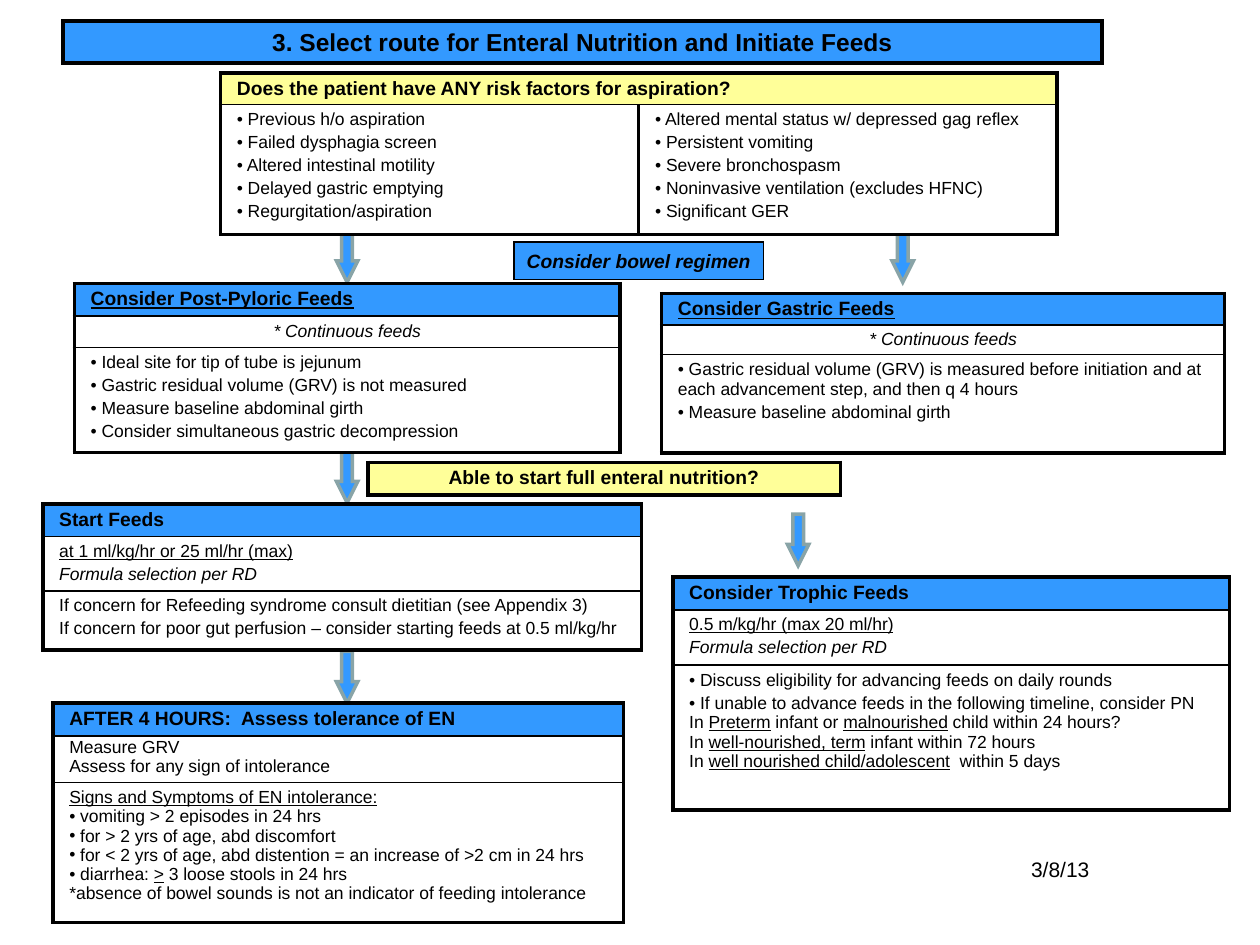
from dataclasses import dataclass
from typing import Optional

from lxml.etree import SubElement
from pptx import Presentation
from pptx.dml.color import RGBColor
from pptx.enum.shapes import MSO_SHAPE
from pptx.enum.text import MSO_ANCHOR, PP_ALIGN
from pptx.oxml.ns import qn
from pptx.util import Inches, Pt

BLUE = RGBColor(0x33, 0x99, 0xFF)
YELLOW = RGBColor(0xFF, 0xFF, 0x99)
WHITE = RGBColor(0xFF, 0xFF, 0xFF)
BLACK = RGBColor(0, 0, 0)
GREY = RGBColor(0x89, 0xA4, 0xA7)
FONT = "Arial"
THICK, THIN = 2.25, 1


@dataclass
class Line:
    """One paragraph; stretches between underscores are underlined."""
    text: str
    size: float = 10
    bold: bool = False
    italic: bool = False
    bullet: bool = False
    centered: bool = False
    before: float = 0.2
    spacing: Optional[float] = None


@dataclass
class Row:
    height: float
    cells: list[list[Line]]
    fill: RGBColor = WHITE


@dataclass
class Panel:
    left: float
    top: float
    width: float
    rows: list[Row]


def heading(text: str, height: float = 0.26, fill: RGBColor = BLUE, centered: bool = False) -> Row:
    return Row(height, [[Line(text, 11, bold=True, centered=centered)]], fill)


def bullets(*texts: str, **style) -> list[Line]:
    return [Line(" " + text, bullet=True, **style) for text in texts]


def write(frame, lines: list[Line]) -> None:
    for index, line in enumerate(lines):
        para = frame.paragraphs[0] if index == 0 else frame.add_paragraph()
        para.alignment = PP_ALIGN.CENTER if line.centered else PP_ALIGN.LEFT
        para.space_before = Pt(line.before * line.size)
        if line.spacing:
            para.line_spacing = line.spacing
        if line.bullet:
            properties = para._p.get_or_add_pPr()
            SubElement(properties, qn("a:buFont"), typeface=FONT)
            SubElement(properties, qn("a:buChar"), char="•")
        font = para.font
        font.name, font.size = FONT, Pt(line.size)
        font.bold, font.italic = line.bold, line.italic
        font.color.rgb = BLACK
        for position, text in enumerate(line.text.split("_")):
            if text:
                span = para.add_run()
                span.text = text
                if position % 2:
                    span.font.underline = True


def set_borders(cell, widths: dict[str, float]) -> None:
    properties = cell._tc.get_or_add_tcPr()
    for index, (side, width) in enumerate(widths.items()):
        border = SubElement(properties, qn(f"a:{side}"), w=str(Pt(width)))
        fill = SubElement(border, qn("a:solidFill"))
        SubElement(fill, qn("a:srgbClr"), val=str(BLACK))
        properties.remove(border)
        properties.insert(index, border)


def add_panel(page, panel: Panel) -> None:
    columns = max(len(row.cells) for row in panel.rows)
    last = len(panel.rows) - 1
    height = sum(row.height for row in panel.rows)
    table = page.shapes.add_table(len(panel.rows), columns, Inches(panel.left), Inches(panel.top),
                                  Inches(panel.width), Inches(height)).table
    table.first_row = table.horz_banding = False
    for index, row in enumerate(panel.rows):
        table.rows[index].height = Inches(row.height)
        if len(row.cells) < columns:
            table.cell(index, 0).merge(table.cell(index, columns - 1))
        for column in range(columns):
            cell = table.cell(index, column)
            cell.margin_left = cell.margin_right = Inches(0.13)
            cell.margin_top = cell.margin_bottom = Inches(0.04)
            cell.fill.solid()
            cell.fill.fore_color.rgb = row.fill
            set_borders(cell, {"lnL": THICK, "lnR": THICK,
                               "lnT": THIN if index else THICK,
                               "lnB": THIN if index < last else THICK})
            if column < len(row.cells):
                write(cell.text_frame, row.cells[column])


def add_box(page, kind, left: float, top: float, width: float, height: float,
            line_color: RGBColor, line_width: float):
    box = page.shapes.add_shape(kind, Inches(left), Inches(top), Inches(width), Inches(height))
    box.shadow.inherit = False
    box.fill.solid()
    box.fill.fore_color.rgb = BLUE
    box.line.color.rgb = line_color
    box.line.width = Pt(line_width)
    # Sharp corners
    SubElement(box._element.spPr.find(qn("a:ln")), qn("a:miter"), lim="800000")
    return box


def add_arrow(page, left: float, top: float) -> None:
    arrow = add_box(page, MSO_SHAPE.DOWN_ARROW, left, top, 0.17, 0.41, GREY, 2)
    arrow.adjustments[0], arrow.adjustments[1] = 0.5, 1


def add_banner(page, left: float, top: float, width: float, height: float,
               border: float, line: Line) -> None:
    banner = add_box(page, MSO_SHAPE.RECTANGLE, left, top, width, height, BLACK, border)
    banner.text_frame.vertical_anchor = MSO_ANCHOR.MIDDLE
    write(banner.text_frame, [line])


def add_date(page, text: str) -> None:
    box = page.shapes.add_textbox(Inches(6.83), Inches(6.75), Inches(3.17), Inches(0.52))
    box.text_frame.word_wrap = True
    write(box.text_frame, [Line(text, 12, centered=True, before=0)])


CONTINUOUS = [[Line("* Continuous feeds", italic=True, centered=True)]]
FORMULA = Line("Formula selection per RD", italic=True)
TIGHT = {"before": 0.15, "spacing": 0.85}

PANELS = [
    Panel(1.75, 0.58, 6.64, [
        heading("Does the patient have ANY risk factors for aspiration?", 0.25, YELLOW),
        Row(1.03, [
            bullets("Previous h/o aspiration", "Failed dysphagia screen", "Altered intestinal motility",
                    "Delayed gastric emptying", "Regurgitation/aspiration"),
            bullets("Altered mental status w/ depressed gag reflex", "Persistent vomiting",
                    "Severe bronchospasm", "Noninvasive ventilation (excludes HFNC)", "Significant GER")])]),
    Panel(5.25, 2.33, 4.47, [
        heading("_Consider Gastric Feeds_", 0.25),
        Row(0.23, CONTINUOUS),
        Row(0.78, [bullets("Gastric residual volume (GRV) is measured before initiation and at "
                           "each advancement step, and then q 4 hours",
                           "Measure baseline abdominal girth")])]),
    Panel(2.92, 3.67, 3.75, [heading("Able to start full enteral nutrition?", fill=YELLOW, centered=True)]),
    Panel(5.34, 4.58, 4.42, [
        heading("Consider Trophic Feeds"),
        Row(0.44, [[Line("_0.5 m/kg/hr (max 20 ml/hr)_"), FORMULA]]),
        Row(1.15, [bullets("Discuss eligibility for advancing feeds on daily rounds",
                           "If unable to advance feeds in the following timeline, consider PN")
                   + [Line(text, before=0) for text in (
                       "In _Preterm_ infant or _malnourished_ child within 24 hours?",
                       "In _well-nourished, term_ infant within 72 hours",
                       "In _well nourished child/adolescent_  within 5 days")]])]),
    Panel(0.59, 2.25, 4.33, [
        heading("_Consider Post-Pyloric Feeds_"),
        Row(0.25, CONTINUOUS),
        Row(0.83, [bullets("Ideal site for tip of tube is jejunum",
                           "Gastric residual volume (GRV) is not measured",
                           "Measure baseline abdominal girth",
                           "Consider simultaneous gastric decompression")])]),
    Panel(0.34, 4, 4.75, [
        heading("Start Feeds"),
        Row(0.43, [[Line("_at 1 ml/kg/hr or 25 ml/hr (max)_"), FORMULA]]),
        Row(0.47, [[Line("If concern for Refeeding syndrome consult dietitian (see Appendix 3)"),
                    Line("If concern for poor gut perfusion – consider starting feeds at 0.5 ml/kg/hr")]])]),
    Panel(0.42, 5.58, 4.53, [
        heading("AFTER 4 HOURS:  Assess tolerance of EN"),
        Row(0.37, [[Line("Measure GRV", spacing=0.8),
                    Line("Assess for any sign of intolerance", spacing=0.8)]]),
        Row(1.11, [[Line("_Signs and Symptoms of EN intolerance:_")]
                   + bullets("vomiting > 2 episodes in 24 hrs", "for > 2 yrs of age, abd discomfort",
                             "for < 2 yrs of age, abd distention = an increase of >2 cm in 24 hrs",
                             "diarrhea: _>_ 3 loose stools in 24 hrs", **TIGHT)
                   + [Line("*absence of bowel sounds is not an indicator of feeding intolerance", **TIGHT)]])]),
]
ARROWS = [(2.67, 1.83), (7.08, 1.83), (2.67, 3.58), (2.67, 5.17), (6.25, 4.08)]


def main() -> None:
    deck = Presentation()
    deck.slide_width, deck.slide_height = Inches(10), Inches(7.5)
    page = deck.slides.add_slide(deck.slide_layouts[6])
    # Arrows lie behind the panels
    for left, top in ARROWS:
        add_arrow(page, left, top)
    # Title and flowchart panels
    add_banner(page, 0.5, 0.17, 8.25, 0.33, THICK,
               Line("3. Select route for Enteral Nutrition and Initiate Feeds", 14, bold=True,
                    centered=True, before=0))
    for panel in PANELS:
        add_panel(page, panel)
    # Side note and date
    add_banner(page, 4.08, 1.92, 1.98, 0.3, 0.75,
               Line("Consider bowel regimen", 11, bold=True, italic=True, centered=True, before=0))
    add_date(page, "3/8/13")
    deck.save("out.pptx")


if __name__ == "__main__":
    main()
